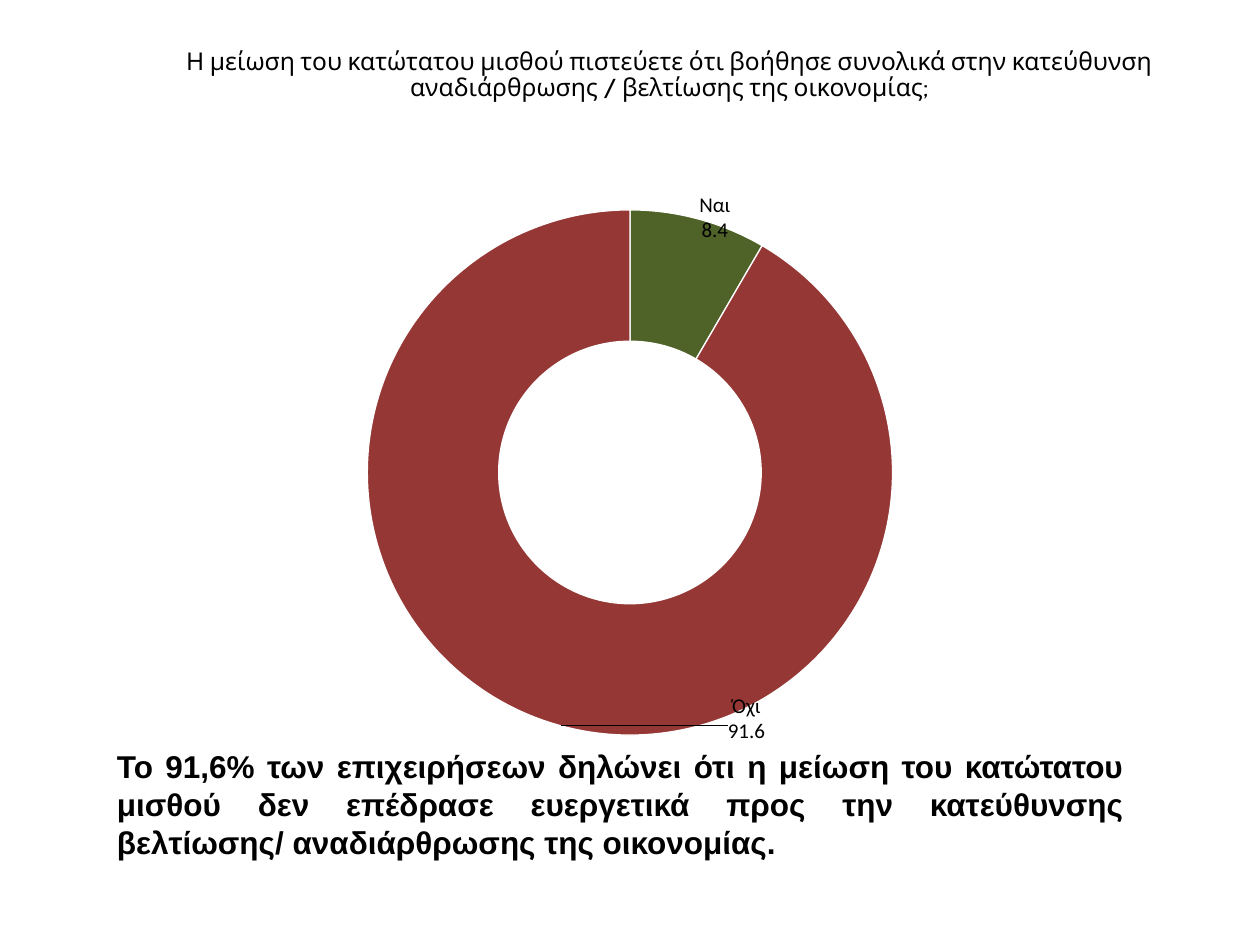
"""Build the slide on the minimum wage question with its doughnut chart."""
from lxml.etree import SubElement
from pptx import Presentation
from pptx.chart.data import CategoryChartData
from pptx.dml.color import RGBColor
from pptx.enum.chart import XL_CHART_TYPE
from pptx.enum.text import PP_ALIGN
from pptx.oxml import parse_xml
from pptx.oxml.ns import nsdecls, qn
from pptx.util import Pt

BLACK = RGBColor(0x00, 0x00, 0x00)
WHITE = RGBColor(0xFF, 0xFF, 0xFF)
GREEN = RGBColor(0x4F, 0x62, 0x28)
RED = RGBColor(0x95, 0x37, 0x35)
DIGITS = "###0.0"


def style(font, face, size, bold=False):
    form = {"name": face, "size": Pt(size), "bold": bold}
    for key, value in form.items():
        setattr(font, key, value)
    font.color.rgb = BLACK


deck = Presentation()
deck.slide_width, deck.slide_height = Pt(720), Pt(540)
slide = deck.slides.add_slide(deck.slide_layouts[6])

data = CategoryChartData(number_format=DIGITS)
data.categories = ["Ναι", "Όχι"]
data.add_series("Series 1", [8.4, 91.6])
frame = slide.shapes.add_chart(
    XL_CHART_TYPE.DOUGHNUT, Pt(120), Pt(110), Pt(480), Pt(320), data)
chart = frame.chart
chart.has_legend = chart.has_title = False
style(chart.font, "Cambria", 18)
plot = chart.plots[0]
plot.vary_by_categories = True

points = plot.series[0].points
for num, color in enumerate([GREEN, RED]):
    point = points[num]
    point.format.fill.solid()
    point.format.fill.fore_color.rgb = color
    point.format.line.color.rgb = WHITE
    point.format.line.width = Pt(0.75)
    style(point.data_label.font, "Calibri", 12)

shifts = [(0.04, -0.12), (0.2, 0.1)]
for label, (right, down) in zip(chart.element.iter(qn("c:dLbl")), shifts):
    place = parse_xml(
        f'<c:layout {nsdecls("c")}><c:manualLayout><c:x val="{right}"/>'
        f'<c:y val="{down}"/></c:manualLayout></c:layout>')
    digits = parse_xml(
        f'<c:numFmt {nsdecls("c")} formatCode="{DIGITS}" sourceLinked="0"/>')
    label.insert(1, place)
    label.insert(2, digits)
    label.find(qn("c:showCatName")).set("val", "1")
    label.find(qn("c:showPercent")).set("val", "0")
    SubElement(label, qn("c:separator")).text = "\n"

texts = [
    ((90, 6.5, 585, 65), 21.5, PP_ALIGN.CENTER, 0.9, ("Cabin", 14),
     "Η μείωση του κατώτατου μισθού πιστεύετε ότι βοήθησε συνολικά στην "
     "κατεύθυνση αναδιάρθρωσης / βελτίωσης της οικονομίας;"),
    ((59.75, 423.5, 589.5, 72.75), 3.6, PP_ALIGN.JUSTIFY, 1.0,
     ("Arial", 18, True),
     "Το 91,6% των επιχειρήσεων δηλώνει ότι η μείωση του κατώτατου μισθού "
     "δεν επέδρασε ευεργετικά προς την κατεύθυνσης βελτίωσης/ "
     "αναδιάρθρωσης της οικονομίας."),
]
for spot, inset, align, pitch, look, words in texts:
    body = slide.shapes.add_textbox(*map(Pt, spot)).text_frame
    body.word_wrap = True
    body.margin_top = Pt(inset)
    line = body.paragraphs[0]
    line.alignment = align
    line.line_spacing = pitch
    run = line.add_run()
    run.text = words
    style(run.font, *look)

deck.save("out.pptx")
